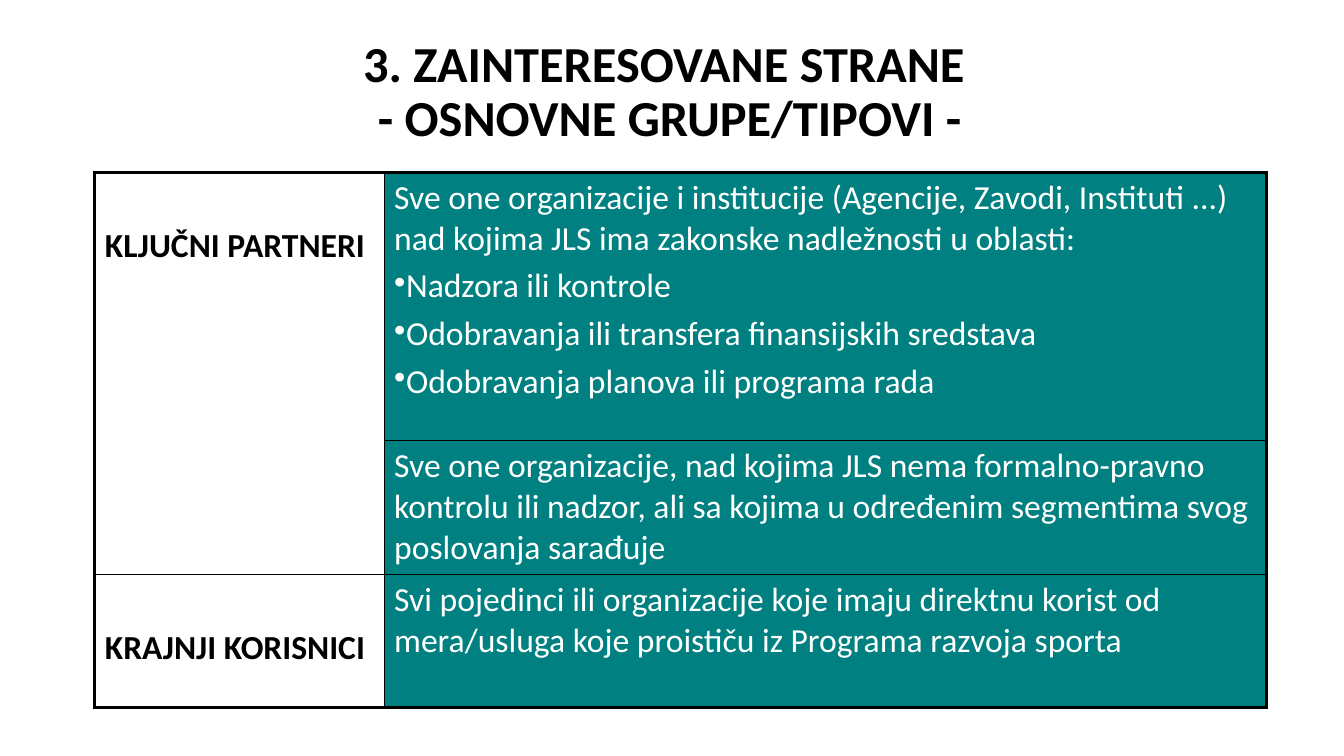
from dataclasses import dataclass

from lxml import etree
from pptx import Presentation
from pptx import util as u
from pptx.dml.color import RGBColor
from pptx.enum import text
from pptx.oxml import ns
from pptx.util import Cm, Pt


@dataclass(frozen=True)
class Theme:
    font: str = "Calibri"
    ink: str = "000000"
    paper: str = "FFFFFF"
    teal: str = "008080"
    title_size: float = 36
    body_size: float = 24
    paragraph_gap: float = 4.8
    outer_line: float = 2.25
    inner_line: float = 1


THEME = Theme()
COLUMN_WIDTHS = (7.29, 22.23)
ROW_HEIGHTS = (6.75, 3.38, 3.35)
LABELS = {0: "KLJUČNI PARTNERI", 2: "KRAJNJI KORISNICI"}
DESCRIPTIONS = (
    (
        "Sve one organizacije i institucije (Agencije, Zavodi, Instituti ...) "
        "nad kojima JLS ima zakonske nadležnosti u oblasti:",
        "•Nadzora ili kontrole",
        "•Odobravanja ili transfera finansijskih sredstava",
        "•Odobravanja planova ili programa rada",
    ),
    (
        "Sve one organizacije, nad kojima JLS nema formalno-pravno kontrolu ili "
        "nadzor, ali sa kojima u određenim segmentima svog poslovanja sarađuje",
    ),
    (
        "Svi pojedinci ili organizacije koje imaju direktnu korist od "
        "mera/usluga koje proističu iz Programa razvoja sporta",
    ),
)


def add_bullet(p):
    pPr = p._p.get_or_add_pPr()
    pPr.set("marL", "0")
    pPr.set("indent", "0")
    etree.SubElement(pPr, ns.qn("a:buChar")).set("char", "•")


def write(tf, paragraphs, size=THEME.body_size, color=THEME.ink, bold=False,
          align=text.PP_ALIGN.LEFT, line_spacing=1.0, gap=0):
    """Fill a frame; a leading • makes a bullet and a newline a line break."""
    tf.word_wrap = True
    for i, content in enumerate(paragraphs):
        p = tf.add_paragraph() if i else tf.paragraphs[0]
        p.alignment = align
        p.line_spacing = line_spacing
        p.space_before = Pt(gap)
        if content.startswith("•"):
            add_bullet(p)
        for j, line in enumerate(content.removeprefix("•").split("\n")):
            if j:
                p.add_line_break()
            r = p.add_run()
            r.text = line
            r.font.name = THEME.font
            r.font.size = Pt(size)
            r.font.bold = bold
            r.font.color.rgb = RGBColor.from_string(color)


def set_borders(cell, widths):
    """Draw the borders given as points for left, right, top and bottom."""
    tcPr = cell._tc.get_or_add_tcPr()
    for i, (side, width) in enumerate(zip("LRTB", widths)):
        ln = etree.Element(ns.qn(f"a:ln{side}"), w=str(int(Pt(width))))
        fill = etree.SubElement(ln, ns.qn("a:solidFill"))
        etree.SubElement(fill, ns.qn("a:srgbClr")).set("val", THEME.ink)
        tcPr.insert(i, ln)


def add_title(s, content):
    tf = s.shapes.add_textbox(Cm(2.82), Cm(0.76), Cm(28.12), Cm(3.18)).text_frame
    tf.vertical_anchor = text.MSO_ANCHOR.MIDDLE
    write(tf, [content], size=THEME.title_size, bold=True,
          align=text.PP_ALIGN.CENTER, line_spacing=0.9)


def add_stakeholder_table(s):
    rows, cols = len(ROW_HEIGHTS), len(COLUMN_WIDTHS)
    table = s.shapes.add_table(
        rows, cols, Cm(2.39), Cm(4.34),
        Cm(sum(COLUMN_WIDTHS)), Cm(sum(ROW_HEIGHTS))).table
    table.first_row = table.horz_banding = False
    for column, width in zip(table.columns, COLUMN_WIDTHS):
        column.width = Cm(width)
    for row, height in zip(table.rows, ROW_HEIGHTS):
        row.height = Cm(height)
    table.cell(0, 0).merge(table.cell(1, 0))

    for i, description in enumerate(DESCRIPTIONS):
        label, detail = table.cell(i, 0), table.cell(i, 1)
        label.fill.background()
        if i in LABELS:
            label.margin_top = Cm(1.34)
            write(label.text_frame, [LABELS[i]], bold=True)
        detail.fill.solid()
        detail.fill.fore_color.rgb = RGBColor.from_string(THEME.teal)
        write(detail.text_frame, description, color=THEME.paper,
              gap=THEME.paragraph_gap)
        for j, cell in enumerate((label, detail)):
            at_edge = (j == 0, j == cols - 1, i == 0, i == rows - 1)
            set_borders(cell, [THEME.outer_line if edge else THEME.inner_line
                               for edge in at_edge])


def main():
    prs = Presentation()
    prs.slide_width, prs.slide_height = u.Cm(33.87), u.Cm(19.05)
    s = prs.slides.add_slide(prs.slide_layouts[6])
    add_title(s, "3. ZAINTERESOVANE STRANE \n- OSNOVNE GRUPE/TIPOVI -")
    add_stakeholder_table(s)
    prs.save("out.pptx")


if __name__ == "__main__":
    main()
